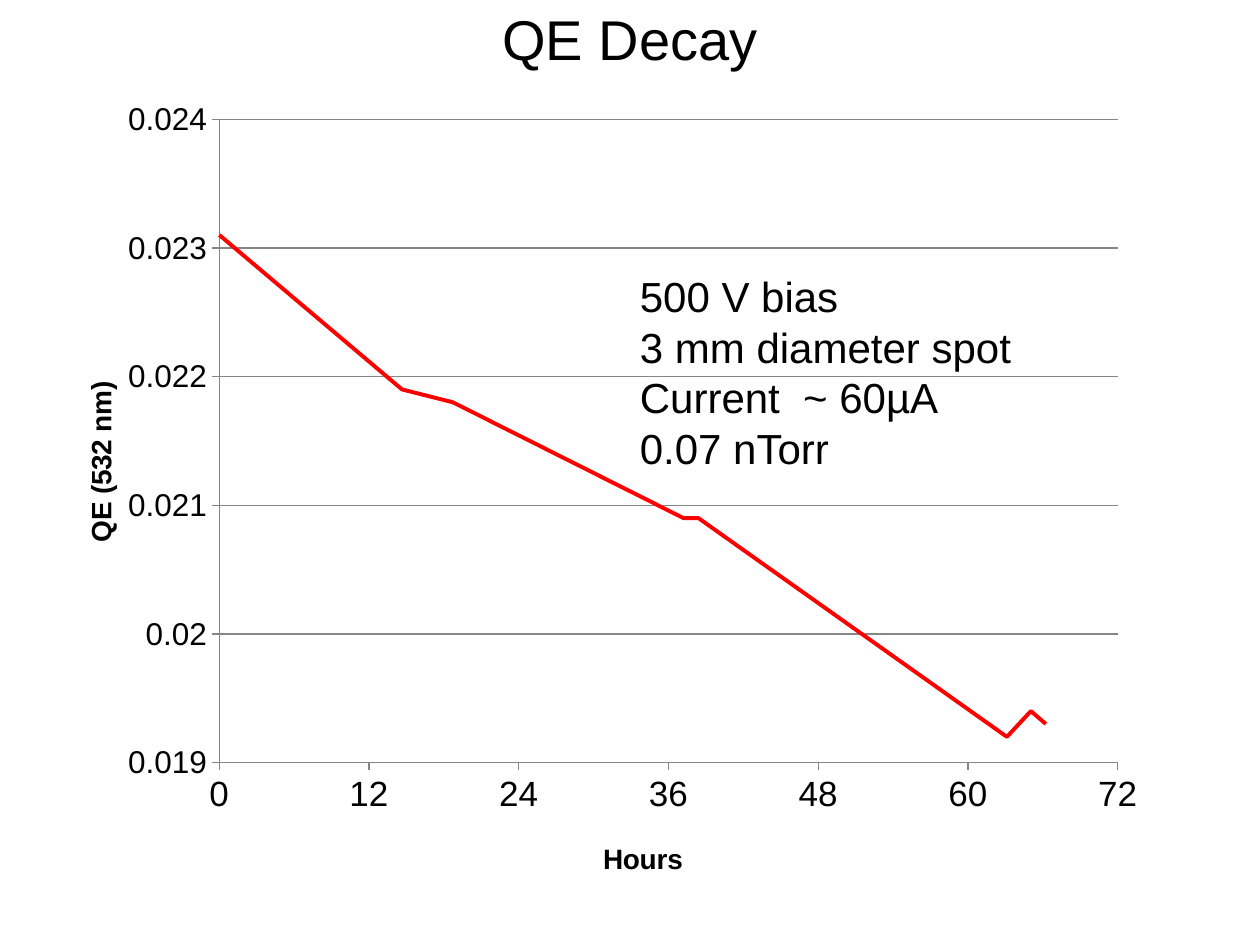
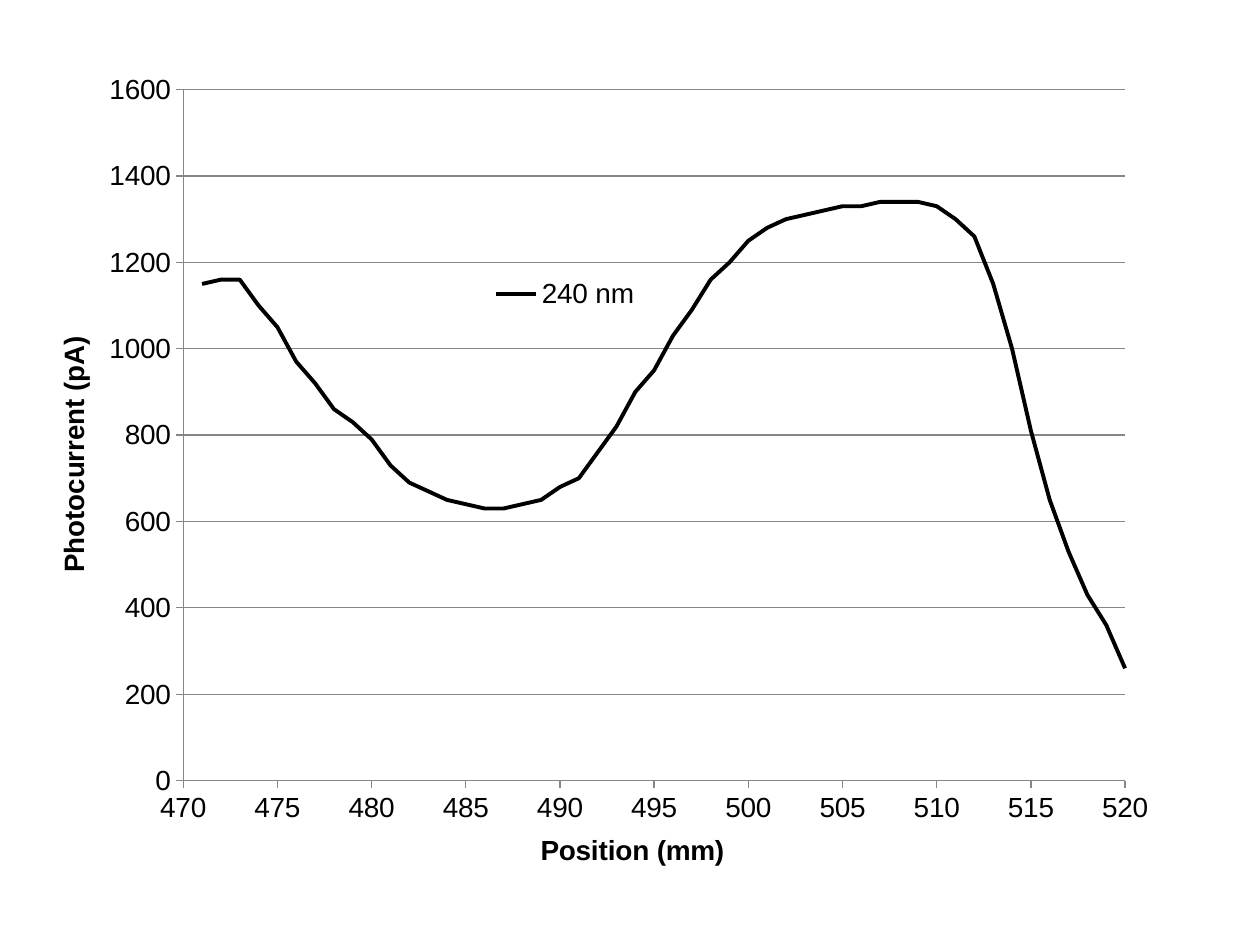
from dataclasses import dataclass
from typing import Optional

from lxml.etree import SubElement
from pptx import Presentation
from pptx.chart.axis import ValueAxis
from pptx.chart.chart import Chart
from pptx.chart.data import XyChartData
from pptx.dml.color import RGBColor
from pptx.enum.chart import XL_CHART_TYPE as ChartType
from pptx.enum.chart import XL_LEGEND_POSITION as LegendPosition
from pptx.enum.chart import XL_TICK_MARK as TickMark
from pptx.enum.text import MSO_ANCHOR as Anchor
from pptx.enum.text import MSO_AUTO_SIZE as AutoSize
from pptx.enum.text import PP_ALIGN as Align
from pptx.oxml import parse_xml
from pptx.oxml.ns import nsdecls, qn
from pptx.slide import Slide
from pptx.text.text import Font, _Paragraph as Paragraph
from pptx.util import Inches, Pt


@dataclass(frozen=True)
class Theme:
    font: str = "Arial"
    ink: RGBColor = RGBColor(0, 0, 0)
    decay: RGBColor = RGBColor(0xFF, 0, 0)
    grid: RGBColor = RGBColor(0x86, 0x86, 0x86)
    title_size: float = 32
    note_size: float = 24
    label_size: float = 16
    curve_width: float = 2.25
    grid_width: float = 0.75


THEME = Theme()


@dataclass(frozen=True)
class Box:
    left: float
    top: float
    width: float
    height: float

    def inches(self) -> tuple:
        return tuple(map(Inches, (self.left, self.top, self.width, self.height)))


@dataclass(frozen=True)
class AxisSpec:
    title: str
    title_at: tuple[float, float]  # share of the chart's width and height
    low: float
    high: float
    step: float
    size: float = THEME.label_size
    number_format: str = "General"
    grid: bool = False


@dataclass(frozen=True)
class CurveChart:
    name: str
    points: list[tuple[float, float]]
    color: RGBColor
    box: Box
    plot: Box  # shares of the chart
    x_axis: AxisSpec
    y_axis: AxisSpec
    legend: Optional[Box] = None


QE_DECAY = CurveChart(
    name="Series 1",
    points=[(0, 0.0231), (0.61, 0.0219), (0.78, 0.0218), (1.55, 0.0209),
            (1.6, 0.0209), (2.63, 0.0192), (2.71, 0.0194), (2.76, 0.0193)],
    color=THEME.decay,
    box=Box(0.53, 0.62, 8.97, 6.4),
    plot=Box(0.135, 0.051, 0.795, 0.798),
    x_axis=AxisSpec("Hours", (0.47, 0.94), 0, 3, 0.5, 20, "[h]"),
    y_axis=AxisSpec("QE (532 nm)", (0.01, 0.37), 0.019, 0.024, 0.001, 18, grid=True),
)

PHOTOCURRENTS = [
    1150, 1160, 1160, 1100, 1050, 970, 920, 860, 830, 790,
    730, 690, 670, 650, 640, 630, 630, 640, 650, 680,
    700, 760, 820, 900, 950, 1030, 1090, 1160, 1200, 1250,
    1280, 1300, 1310, 1320, 1330, 1330, 1340, 1340, 1340, 1330,
    1300, 1260, 1150, 1000, 810, 650, 530, 430, 360, 260,
]
PHOTOCURRENT_SCAN = CurveChart(
    name="240 nm",
    points=list(enumerate(PHOTOCURRENTS, start=471)),
    color=THEME.ink,
    box=Box(0.31, 0.56, 9.38, 6.38),
    plot=Box(0.122, 0.024, 0.797, 0.867),
    x_axis=AxisSpec("Position (mm)", (0.42, 0.95), 470, 520, 5),
    y_axis=AxisSpec("Photocurrent (pA)", (0.01, 0.33), 0, 1600, 200, grid=True),
    legend=Box(0.36, 0.25, 0.17, 0.06),
)

TITLE_BOX = Box(0.5, 0.01, 9, 0.58)
CONDITIONS_BOX = Box(4.98, 2.1, 3.18, 1.72)
CONDITIONS = ["500 V bias", "3 mm diameter spot", "Current  ~ 60µA", "0.07 nTorr"]


def style_font(font: Font, size: float, bold: bool = False) -> None:
    font.name = THEME.font
    font.size = Pt(size)
    font.bold = bold
    font.color.rgb = THEME.ink


def add_span(para: Paragraph, text: str, size: float, bold: bool = False) -> None:
    span = para.add_run()
    span.text = text
    style_font(span.font, size, bold)


def place_part(parent, **shares: float) -> None:
    """Give a chart part a manual layout, in shares of the chart."""
    layout = parent.find(qn("c:layout"))
    if layout is None:
        layout = parse_xml(f"<c:layout {nsdecls('c')}/>")
        leaders = parent.xpath("c:tx | c:legendPos")
        if leaders:
            leaders[-1].addnext(layout)
        else:
            parent.insert(0, layout)
    for child in list(layout):
        layout.remove(child)
    manual = SubElement(layout, qn("c:manualLayout"))
    if parent.tag == qn("c:plotArea"):
        SubElement(manual, qn("c:layoutTarget")).set("val", "inner")
    for key in ("x", "y"):
        SubElement(manual, qn(f"c:{key}Mode")).set("val", "edge")
    for key, share in shares.items():
        SubElement(manual, qn(f"c:{key}")).set("val", str(share))


def place_box(parent, box: Box) -> None:
    place_part(parent, x=box.left, y=box.top, w=box.width, h=box.height)


def style_axis(axis: ValueAxis, spec: AxisSpec) -> None:
    axis.minimum_scale = spec.low
    axis.maximum_scale = spec.high
    axis.major_unit = spec.step
    axis.major_tick_mark = TickMark.OUTSIDE
    axis.minor_tick_mark = TickMark.NONE
    axis.has_major_gridlines = spec.grid
    axis.tick_labels.number_format = spec.number_format
    axis.tick_labels.number_format_is_linked = False
    style_font(axis.tick_labels.font, spec.size)
    lines = [axis.format.line]
    if spec.grid:
        lines.append(axis.major_gridlines.format.line)
    for line in lines:
        line.color.rgb = THEME.grid
        line.width = Pt(THEME.grid_width)
    para = axis.axis_title.text_frame.paragraphs[0]
    add_span(para, spec.title, THEME.label_size, bold=True)
    left, top = spec.title_at
    place_part(axis.axis_title.element, x=left, y=top)


def add_legend(chart: Chart, box: Box) -> None:
    chart.has_legend = True
    chart.legend.position = LegendPosition.RIGHT
    chart.legend.include_in_layout = False
    style_font(chart.legend.font, THEME.label_size)
    place_box(chart.element.xpath(".//c:legend")[0], box)


def add_curve_chart(page: Slide, spec: CurveChart) -> None:
    data = XyChartData()
    points = data.add_series(spec.name)
    for x, y in spec.points:
        points.add_data_point(x, y)
    frame = page.shapes.add_chart(
        ChartType.XY_SCATTER_SMOOTH_NO_MARKERS, *spec.box.inches(), data)
    chart = frame.chart
    chart.has_title = False
    chart.has_legend = False
    style_font(chart.font, THEME.label_size)
    plot = chart.plots[0]
    plot.vary_by_categories = False
    curve = plot.series[0]
    curve.format.line.color.rgb = spec.color
    curve.format.line.width = Pt(THEME.curve_width)
    style_axis(chart.category_axis, spec.x_axis)
    style_axis(chart.value_axis, spec.y_axis)
    place_box(chart.element.xpath(".//c:plotArea")[0], spec.plot)
    if spec.legend:
        add_legend(chart, spec.legend)


def set_title(page: Slide, text: str) -> None:
    title = page.shapes.title
    title.left, title.top, title.width, title.height = TITLE_BOX.inches()
    frame = title.text_frame
    frame.vertical_anchor = Anchor.MIDDLE
    frame.auto_size = AutoSize.NONE
    para = frame.paragraphs[0]
    para.alignment = Align.CENTER
    add_span(para, text, THEME.title_size)


def add_note(page: Slide, lines: list[str], box: Box) -> None:
    frame = page.shapes.add_textbox(*box.inches()).text_frame
    frame.word_wrap = False
    frame.auto_size = AutoSize.SHAPE_TO_FIT_TEXT
    for index, line in enumerate(lines):
        para = frame.add_paragraph() if index else frame.paragraphs[0]
        add_span(para, line, THEME.note_size)


def main() -> None:
    deck = Presentation()
    deck.slide_width, deck.slide_height = Inches(10), Inches(7.5)
    title_only, blank = deck.slide_layouts[5], deck.slide_layouts[6]

    decay_page = deck.slides.add_slide(title_only)
    add_curve_chart(decay_page, QE_DECAY)
    set_title(decay_page, "QE Decay")
    add_note(decay_page, CONDITIONS, CONDITIONS_BOX)

    scan_page = deck.slides.add_slide(blank)
    add_curve_chart(scan_page, PHOTOCURRENT_SCAN)

    deck.save("out.pptx")


if __name__ == "__main__":
    main()
